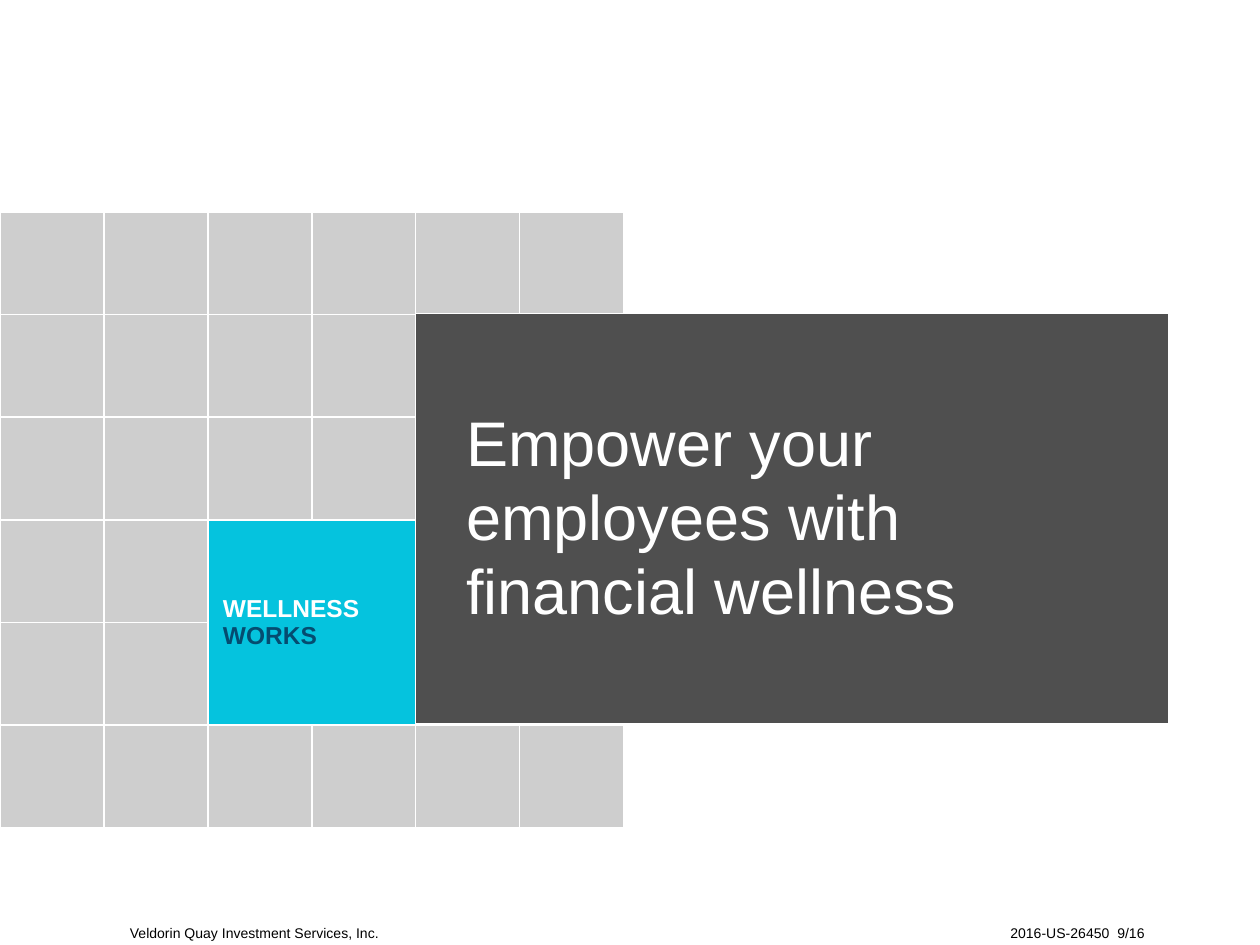
"""Build the opening slide: a tile grid, a headline panel and a footer line."""
import pptx
import pptx.util
import pptx.dml.color
import pptx.enum.text
import pptx.oxml
import pptx.oxml.ns
import lxml.etree

Pt = pptx.util.Pt
ANCHOR = pptx.enum.text.MSO_ANCHOR
ALIGN = pptx.enum.text.PP_ALIGN
COLORS = {"white": "FFFFFF", "tile": "CECECE", "accent": "05C3DE",
          "navy": "054C70", "panel": "4F4F4F", "black": "000000"}
GRID = 6


def rgb(name):
    return pptx.dml.color.RGBColor.from_string(COLORS[name])


def apply(obj, **formats):
    for name, value in formats.items():
        setattr(obj, name, value)


def set_margins(obj, left, top, right, bottom):
    apply(obj, margin_left=Pt(left), margin_top=Pt(top),
          margin_right=Pt(right), margin_bottom=Pt(bottom))


def set_fill(obj, color):
    obj.fill.solid()
    obj.fill.fore_color.rgb = rgb(color)


def set_font(font, size, color, bold=False):
    apply(font, name="Arial", size=Pt(size), bold=bold)
    font.color.rgb = rgb(color)


def add_borders(cell, color, width):
    qn = pptx.oxml.ns.qn
    tcPr = cell._tc.get_or_add_tcPr()
    for side in ("a:lnL", "a:lnR", "a:lnT", "a:lnB"):
        ln = lxml.etree.SubElement(tcPr, qn(side), w=str(Pt(width)))
        fill = lxml.etree.SubElement(ln, qn("a:solidFill"))
        lxml.etree.SubElement(fill, qn("a:srgbClr"), val=COLORS[color])


def add_tiles(s):
    frame = s.shapes.add_table(GRID, GRID, 0, Pt(121), Pt(356.4), Pt(352.2))
    table = frame.table
    apply(table, first_row=False, horz_banding=False)
    for cell in table.iter_cells():
        add_borders(cell, "white", 1)
        set_fill(cell, "tile")
    add_label(table)
    return frame


def add_label(table):
    cell = table.cell(3, 2)
    cell.merge(table.cell(4, 3))
    set_fill(cell, "accent")
    set_margins(cell, 8.64, 4.32, 8.64, 4.32)
    cell.vertical_anchor = ANCHOR.MIDDLE
    tf = cell.text_frame
    tf.text = "WELLNESS\nWORKS"
    for p, color in zip(tf.paragraphs, ("white", "navy")):
        set_font(p.runs[0].font, 14, color, True)


def format_headline(sp, text):
    apply(sp, left=Pt(237.6), top=Pt(179.3), width=Pt(430.5), height=Pt(234))
    set_fill(sp, "panel")
    sp.line.color.rgb = rgb("white")
    sp.line.width = Pt(0.75)
    tf = sp.text_frame
    apply(tf, text=text, word_wrap=True, vertical_anchor=ANCHOR.MIDDLE,
          auto_size=pptx.enum.text.MSO_AUTO_SIZE.NONE)
    set_margins(tf, 28.8, 21.6, 21.6, 21.6)
    p = tf.paragraphs[0]
    apply(p, alignment=ALIGN.LEFT, line_spacing=0.98)
    set_font(p.runs[0].font, 36, "white")


def add_footer(s, left_text, right_text):
    sp = s.shapes.add_textbox(Pt(74.2), Pt(528.5), Pt(586.8), Pt(9.4))
    tf = sp.text_frame
    tf.word_wrap = True
    set_margins(tf, 0, 0, 0, 0)
    p = tf.paragraphs[0]
    tabs = lxml.etree.SubElement(p._p.get_or_add_pPr(), pptx.oxml.ns.qn("a:tabLst"))
    lxml.etree.SubElement(tabs, pptx.oxml.ns.qn("a:tab"), pos=str(Pt(580)), algn="r")
    r = p.add_run()
    r.text = f"{left_text}\t{right_text}"
    set_font(r.font, 8, "black")


def main():
    prs = pptx.Presentation()
    apply(prs, slide_width=Pt(720), slide_height=Pt(540))
    s = prs.slides.add_slide(prs.slide_layouts[5])
    title = s.shapes.title
    frame = add_tiles(s)
    title._element.addprevious(frame._element)
    format_headline(title, "Empower your employees with financial wellness")
    add_footer(s, "Veldorin Quay Investment Services, Inc.", "2016-US-26450  9/16")
    prs.save("out.pptx")


if __name__ == "__main__":
    main()
